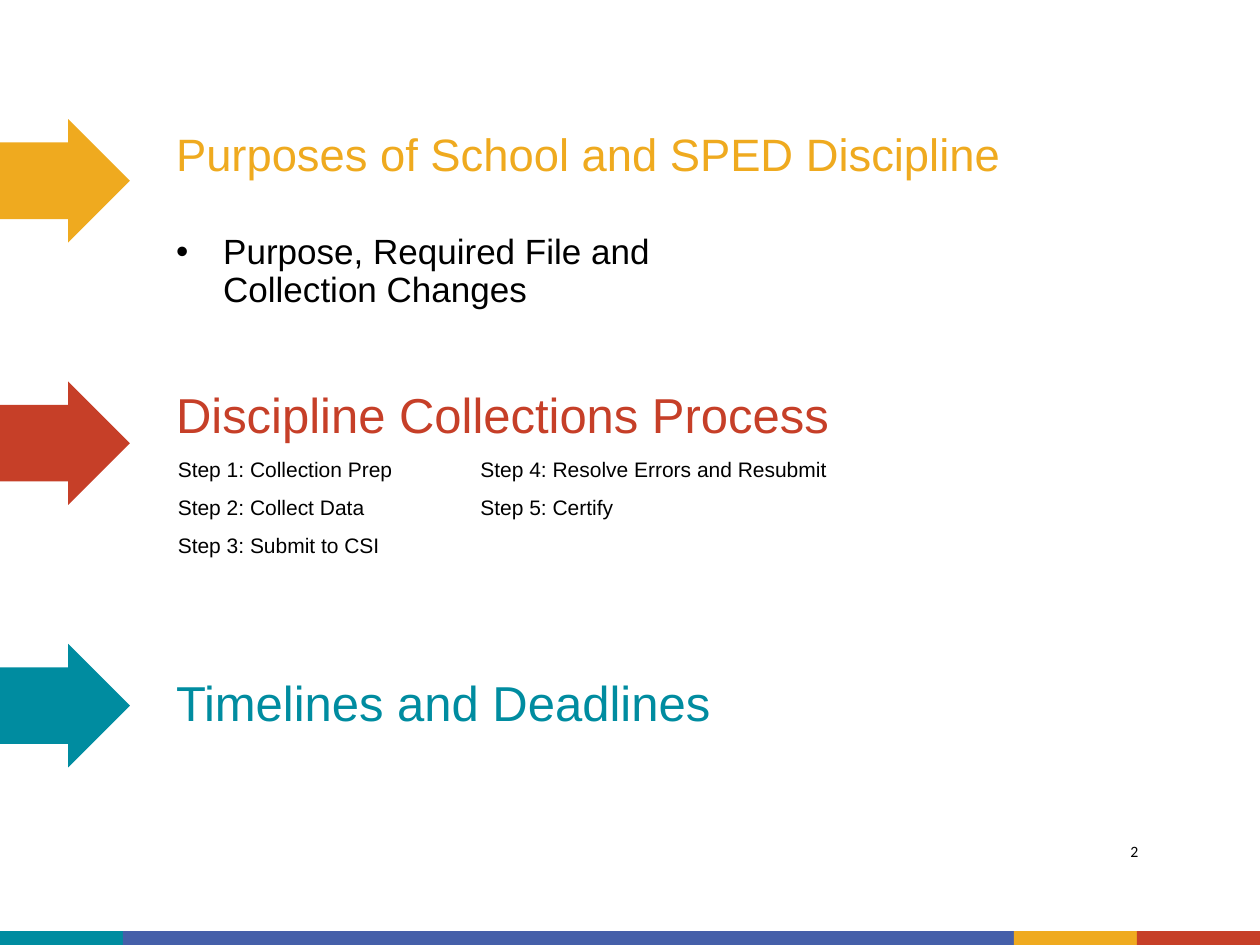
from lxml.etree import SubElement
from pptx import Presentation
from pptx.dml.color import RGBColor
from pptx.enum.shapes import MSO_SHAPE as Shape
from pptx.oxml.ns import qn
from pptx.util import Cm, Pt

GOLD, RED, TEAL, BLUE = "EFAA1F", "C63F28", "008CA0", "455FA9"
BLACK, WHITE = "000000", "FFFFFF"

arrow_colors = [GOLD, RED, TEAL]
footer_bands = [(TEAL, 2.48), (BLUE, 17.96), (GOLD, 2.48), (RED, 2.48)]
headings = [
    ("Purposes of School and SPED Discipline", 2.54, 18.26, 25.9, GOLD),
    ("Discipline Collections Process", 7.77, 16.97, 28, RED),
    ("Timelines and Deadlines", 13.56, 16.97, 28, TEAL),
]
purpose = "Purpose, Required File and Collection Changes"
steps = [
    ("Step 1: Collection Prep", "Step 4: Resolve Errors and Resubmit"),
    ("Step 2: Collect Data", "Step 5: Certify"),
    ("Step 3: Submit to CSI", ""),
]
step_widths = [6.1, 8.33]
step_heights = [0.76, 0.74, 1.04]
text_left = 3.3


def rgb(color):
    return RGBColor.from_string(color)


def write(frame, text, size=12, color=BLACK, font="Arial", spacing=None, bullet=None):
    frame.word_wrap = True
    paragraph = frame.paragraphs[0]
    paragraph.line_spacing = spacing
    if bullet:
        properties = paragraph._p.get_or_add_pPr()
        properties.set("marL", str(Cm(0.95)))
        properties.set("indent", str(-Cm(0.95)))
        SubElement(properties, qn("a:buFont"), typeface="Arial")
        SubElement(properties, qn("a:buChar"), char=bullet)
    paragraph.font.size = Pt(size)
    run = paragraph.add_run()
    run.text = text
    run.font.size = Pt(size)
    run.font.name = font
    run.font.color.rgb = rgb(color)


def add_text(slide, text, left, top, width, height, inset=None, **format):
    frame = slide.shapes.add_textbox(Cm(left), Cm(top), Cm(width), Cm(height)).text_frame
    if inset is not None:
        frame.margin_left = frame.margin_right = Cm(inset)
        frame.margin_top = frame.margin_bottom = Cm(inset)
    write(frame, text, **format)


def add_block(slide, kind, left, top, width, height, color):
    block = slide.shapes.add_shape(kind, Cm(left), Cm(top), Cm(width), Cm(height))
    block.shadow.inherit = False
    block.fill.solid()
    block.fill.fore_color.rgb = rgb(color)
    block.line.fill.background()
    return block


def set_borders(cell, bottom):
    properties = cell._tc.get_or_add_tcPr()
    for side, width in [("L", 1), ("R", 1), ("T", 1), ("B", bottom)]:
        line = SubElement(properties, qn(f"a:ln{side}"), w=str(Pt(width)))
        SubElement(SubElement(line, qn("a:solidFill")), qn("a:srgbClr"), val=WHITE)


def add_steps(slide):
    table = slide.shapes.add_table(
        len(steps), len(step_widths), Cm(3.33), Cm(9.12),
        Cm(sum(step_widths)), Cm(sum(step_heights)),
    ).table
    table.first_row = table.horz_banding = False
    for column, width in zip(table.columns, step_widths):
        column.width = Cm(width)
    for index, (row, height, labels) in enumerate(zip(table.rows, step_heights, steps)):
        row.height = Cm(height)
        for cell, label in zip(row.cells, labels):
            set_borders(cell, 1 if index else 3)
            cell.fill.background()
            if label:
                write(cell.text_frame, label)


def main():
    deck = Presentation()
    deck.slide_width, deck.slide_height = Cm(25.4), Cm(19.05)
    slide = deck.slides.add_slide(deck.slide_layouts[6])

    for index, color in enumerate(arrow_colors):
        arrow = add_block(slide, Shape.RIGHT_ARROW, 0, 2.4 + 5.29 * index, 2.62, 2.49, color)
        arrow.adjustments[0] = 0.62
        arrow.adjustments[1] = 0.5

    left = 0
    for color, width in footer_bands:
        add_block(slide, Shape.RECTANGLE, left, 18.77, width, 0.28, color)
        left += width

    for text, top, width, size, color in headings:
        add_text(slide, text, text_left, top, width, 1.8, size=size, color=color, spacing=0.9)
    add_text(slide, purpose, text_left, 4.6, 11.35, 1.57, size=20, spacing=0.9, bullet="•")
    add_steps(slide)
    add_text(slide, "2", 22.61, 16.79, 1.14, 0.86, inset=0.18, size=9, font="Calibri")

    deck.save("out.pptx")


if __name__ == "__main__":
    main()
